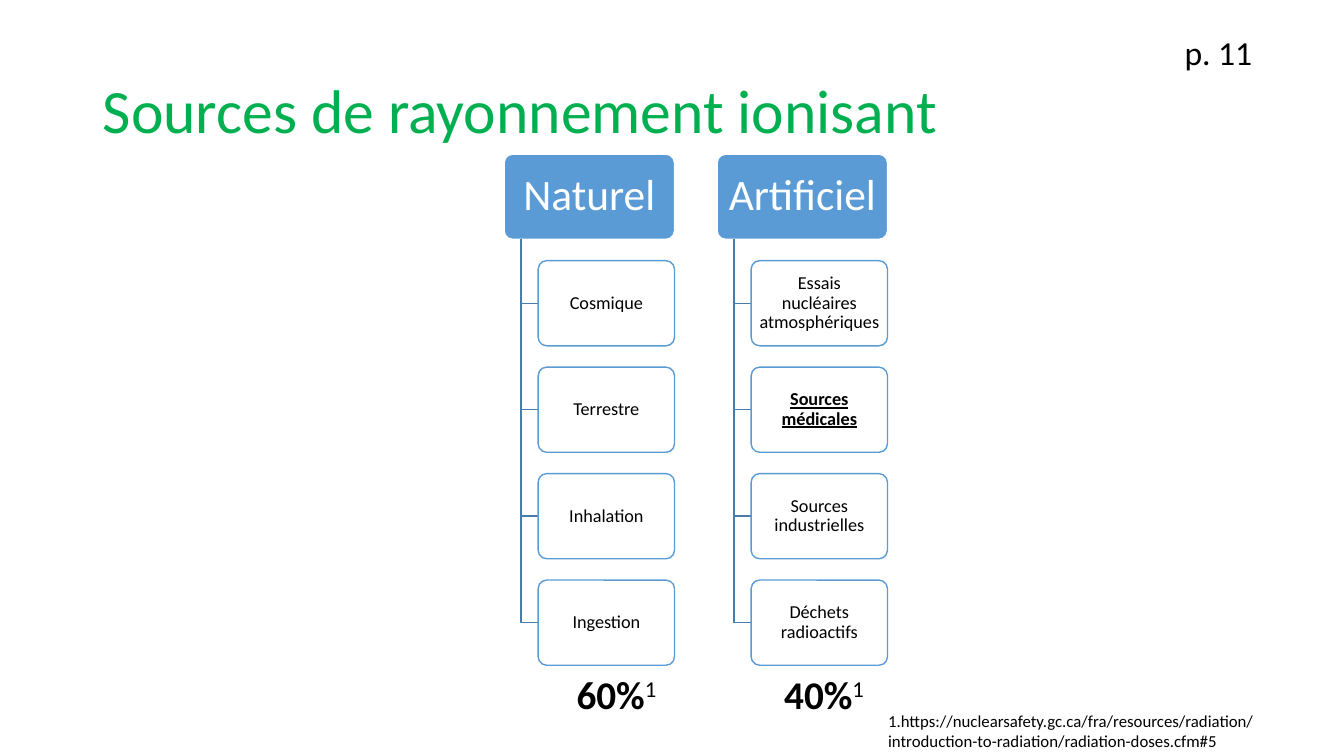
from pptx import Presentation
from pptx.dml.color import RGBColor
from pptx.enum.shapes import MSO_SHAPE
from pptx.enum.text import MSO_ANCHOR, MSO_AUTO_SIZE, PP_ALIGN
from pptx.util import Inches, Pt

TITLE = "Sources de rayonnement ionisant"
KINDS = [
    ("Naturel", ["Cosmique", "Terrestre", "Inhalation", "Ingestion"]),
    ("Artificiel", ["Essais nucléaires atmosphériques", "Sources médicales",
                    "Sources industrielles", "Déchets radioactifs"]),
]
KEY = "Sources médicales"
SHARES = [("60%", (5.62, 6.6, 1.05, 0.57)), ("40%", (7.68, 6.6, 1.16, 0.57))]
NOTES = [
    ("1.https://nuclearsafety.gc.ca/fra/resources/radiation/"
     "introduction-to-radiation/radiation-doses.cfm#5", (8.71, 7, 4.62, 0.5), 12),
    ("p. 11", (11.65, 0.27, 1.23, 0.51), 24),
]
COLORS = {"green": "00B050", "blue": "5B9BD5", "line": "497CAB",
          "white": "FFFFFF", "black": "000000"}
LEFT, TOP, WIDTH = 5, 1.53, 1.69
HIGH = WIDTH / 2
STEP = HIGH * 1.25

deck = Presentation()
deck.slide_width, deck.slide_height = Inches(13.33), Inches(7.5)
slide = deck.slides.add_slide(deck.slide_layouts[5])
shapes = slide.shapes


def color(name):
    return RGBColor.from_string(COLORS[name])


def write(para, text, size, tint="black", **style):
    run = para.add_run()
    run.text = text
    run.font.color.rgb = color(tint)
    for name, value in {"name": "Calibri", "size": Pt(size), **style}.items():
        setattr(run.font, name, value)
    return run


def stroke(shape, tint):
    shape.shadow.inherit = False
    shape.line.color.rgb = color(tint)
    shape.line.width = Pt(1)


def add_box(text, x, y, wide, fill, edge, inset, size, tint, **style):
    box = shapes.add_shape(MSO_SHAPE.ROUNDED_RECTANGLE,
                           *map(Inches, (x, y, wide, HIGH)))
    box.adjustments[0] = 0.1
    box.fill.solid()
    box.fill.fore_color.rgb = color(fill)
    stroke(box, edge)
    frame = box.text_frame
    gap = Inches(inset)
    for name, value in {"word_wrap": True, "vertical_anchor": MSO_ANCHOR.MIDDLE,
                        "margin_left": gap, "margin_right": gap,
                        "margin_top": gap, "margin_bottom": gap}.items():
        setattr(frame, name, value)
    para = frame.paragraphs[0]
    para.alignment = PP_ALIGN.CENTER
    para.line_spacing = 0.9
    write(para, text, size, tint, **style)


def add_link(x, y, turn, end):
    path = shapes.build_freeform(Inches(x), Inches(y))
    path.add_line_segments([(Inches(x), Inches(turn)),
                            (Inches(end), Inches(turn))], close=False)
    link = path.convert_to_shape()
    link.fill.background()
    stroke(link, "line")


def add_text(place):
    frame = shapes.add_textbox(*map(Inches, place)).text_frame
    frame.word_wrap = True
    return frame.paragraphs[0]


title = shapes.title
title.left, title.top, title.width, title.height = map(Inches, (0.92, 0.4, 11.5, 1.45))
title.text_frame.vertical_anchor = MSO_ANCHOR.MIDDLE
title.text_frame.auto_size = MSO_AUTO_SIZE.NONE
head = title.text_frame.paragraphs[0]
head.alignment = PP_ALIGN.LEFT
head.line_spacing = 0.9
write(head, TITLE, 44, "green")

for col, (kind, items) in enumerate(KINDS):
    x = LEFT + col * WIDTH * 1.25
    add_box(kind, x, TOP, WIDTH, "blue", "white", 0.08, 31, "white")
    for row, item in enumerate(items, 1):
        y = TOP + row * STEP
        inner = x + WIDTH * 0.2
        add_link(x + WIDTH * 0.1, TOP + HIGH, y + HIGH / 2, inner)
        style = {"bold": True, "underline": True} if item == KEY else {}
        add_box(item, inner, y, WIDTH * 0.8, "white", "blue", 0.05, 13, "black", **style)

for share, place in SHARES:
    para = add_text(place)
    write(para, share, 28, bold=True)
    mark = write(para, "1", 28, bold=False)
    mark._r.get_or_add_rPr().set("baseline", "30000")

for text, place, size in NOTES:
    write(add_text(place), text, size)

deck.save("out.pptx")
